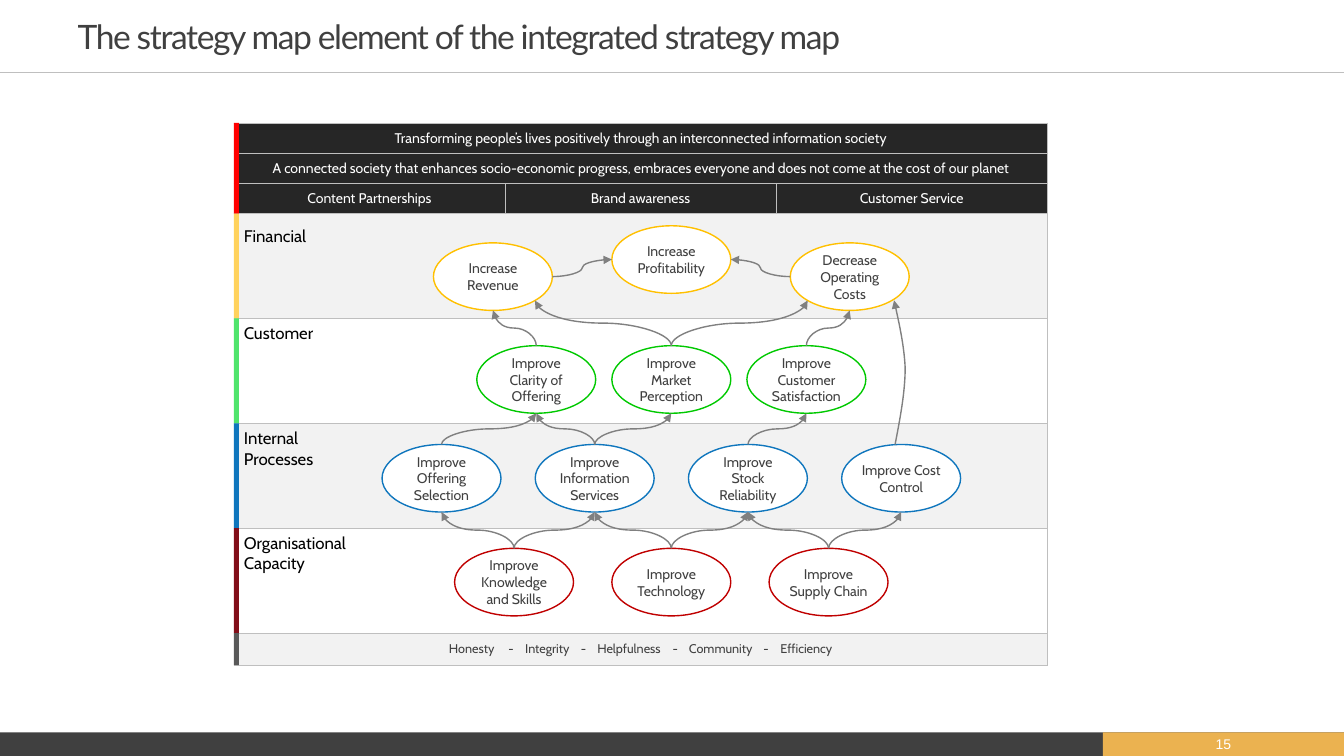
from math import cos, radians, sin

from lxml.etree import SubElement
from pptx import Presentation
from pptx.dml.color import RGBColor
from pptx.enum.shapes import MSO_CONNECTOR, MSO_SHAPE
from pptx.enum.text import MSO_ANCHOR, PP_ALIGN
from pptx.oxml.ns import qn
from pptx.util import Inches, Pt

COLUMNS, ROWS = 160, 90
WHITE = RGBColor(0xFF, 0xFF, 0xFF)
BLACK = RGBColor(0x00, 0x00, 0x00)
CHARCOAL = RGBColor(0x26, 0x26, 0x26)
DARK = RGBColor(0x40, 0x40, 0x40)
SLATE = RGBColor(0x59, 0x59, 0x59)
GREY = RGBColor(0x80, 0x80, 0x80)
RULE = RGBColor(0xBF, 0xBF, 0xBF)
PALE = RGBColor(0xF2, 0xF2, 0xF2)
GOLD = RGBColor(0xEB, 0xB2, 0x50)
AMBER = RGBColor(0xFF, 0xC0, 0x00)
YELLOW = RGBColor(0xFF, 0xD2, 0x5D)
GREEN = RGBColor(0x00, 0xC9, 0x00)
MINT = RGBColor(0x50, 0xE4, 0x6C)
BLUE = RGBColor(0x0F, 0x76, 0xBD)
CRIMSON = RGBColor(0xC0, 0x00, 0x00)
MAROON = RGBColor(0x82, 0x0E, 0x19)
RED = RGBColor(0xFF, 0x00, 0x00)

# Connection sites of an ellipse, counter-clockwise from the top
TOP, LEFT, BOTTOM_LEFT, BOTTOM, BOTTOM_RIGHT, RIGHT = 0, 2, 3, 4, 5, 6

MAP_LEFT, MAP_TOP, MAP_COLUMN = 27.84, 14.64, 32.28
BANNER, BAND, VALUES = 3.6, 12.48, 3.84
AXIS = 79.92
OVAL_WIDTH, OVAL_HEIGHT = 14.16, 8.04


def write(frame, text, *, size=10, font="Cabin", color=DARK, align=PP_ALIGN.CENTER,
          spacing=None, tabs=()):
    """Put one paragraph in a frame; tabs are centred stops in grid columns."""
    para = frame.paragraphs[0]
    para.text = text
    para.alignment = align
    if tabs:
        stops = SubElement(para._p.get_or_add_pPr(), qn("a:tabLst"))
        for stop in tabs:
            SubElement(stops, qn("a:tab"), pos=str(Style.unit(stop)), algn="ctr")
    for span in para.runs:
        span.font.size = Pt(size)
        span.font.name = font
        span.font.color.rgb = color
        if spacing is not None:
            span._r.get_or_add_rPr().set("spc", str(spacing))


class Style:
    """Holds the page and draws on its grid of 160 by 90 square cells."""

    def __init__(self, page):
        self.page = page
        self.shapes = page.shapes

    @staticmethod
    def unit(cells):
        return Inches(cells / 12)

    def place(self, *lengths):
        return [self.unit(length) for length in lengths]

    def title(self, text, *area):
        box = self.shapes.title
        box.left, box.top, box.width, box.height = self.place(*area)
        frame = box.text_frame
        frame.margin_top = frame.margin_bottom = 0
        frame.vertical_anchor = MSO_ANCHOR.MIDDLE
        write(frame, text, size=24, font="Lato", align=PP_ALIGN.LEFT, spacing=-100)

    def shape(self, kind, area, fill, outline=None, text="", **style):
        box = self.shapes.add_shape(kind, *self.place(*area))
        box.shadow.inherit = False
        box.fill.solid()
        box.fill.fore_color.rgb = fill
        if outline is None:
            box.line.fill.background()
        else:
            box.line.color.rgb = outline
            box.line.width = Pt(1)
        if text:
            frame = box.text_frame
            frame.margin_left = frame.margin_right = 0
            frame.margin_top = frame.margin_bottom = 0
            frame.vertical_anchor = MSO_ANCHOR.MIDDLE
            write(frame, text, **style)
        return box

    def oval(self, text, center, middle, color):
        area = (center - OVAL_WIDTH / 2, middle - OVAL_HEIGHT / 2, OVAL_WIDTH, OVAL_HEIGHT)
        return self.shape(MSO_SHAPE.OVAL, area, WHITE, color, text)

    def stroke(self, line, color=GREY, arrow=True):
        line.line.color.rgb = color
        line.line.width = Pt(1)
        if arrow:
            SubElement(line.line._get_or_add_ln(), qn("a:tailEnd"), type="triangle")
        SubElement(line._element.spPr, qn("a:effectLst"))

    def rule(self, row):
        line = self.shapes.add_connector(MSO_CONNECTOR.STRAIGHT, *self.place(0, row, COLUMNS, row))
        self.stroke(line, RULE, arrow=False)

    def link(self, start, start_site, end, end_site):
        """Join two ovals by a curved arrow; upward ones are a turned S-curve."""
        (x1, y1), (x2, y2) = site_point(start, start_site), site_point(end, end_site)
        turn = 0
        if start_site == TOP:
            turn = 90 if x2 > x1 else 270
            side = 1 if x2 > x1 else -1
            center, middle = (x1 + x2) / 2, (y1 + y2) / 2
            half_width, half_height = (y1 - y2) / 2, abs(x2 - x1) / 2
            x1, x2 = center + side * half_width, center - side * half_width
            y1, y2 = middle + half_height, middle - half_height
        line = self.shapes.add_connector(MSO_CONNECTOR.CURVE, *map(round, (x1, y1, x2, y2)))
        if turn:
            line._element.spPr.find(qn("a:xfrm")).set("rot", str(turn * 60000))
        joints = line._element.find(".//" + qn("p:cNvCxnSpPr"))
        for tag, oval, site in (("a:stCxn", start, start_site), ("a:endCxn", end, end_site)):
            SubElement(joints, qn(tag), id=str(oval.shape_id), idx=str(site))
        self.stroke(line)

    def bezier(self, points):
        """Draw an arrow through a start point and cubic triples."""
        start, *rest = [self.place(*point) for point in points]
        builder = self.shapes.build_freeform(*start)
        builder.add_line_segments(rest, close=False)
        curve = builder.convert_to_shape()
        outline = curve._element.find(".//" + qn("a:path"))
        segments = outline.findall(qn("a:lnTo"))
        for first in range(0, len(segments), 3):
            cubic = SubElement(outline, qn("a:cubicBezTo"))
            for segment in segments[first:first + 3]:
                cubic.append(segment[0])
                outline.remove(segment)
        curve.fill.background()
        self.stroke(curve)

    def table(self, left, top, widths, heights):
        frame = self.shapes.add_table(len(heights), len(widths),
                                      *self.place(left, top, sum(widths), sum(heights)))
        table = frame.table
        table.first_row = table.horz_banding = False
        for column, width in zip(table.columns, widths):
            column.width = self.unit(width)
        for row, height in zip(table.rows, heights):
            row.height = self.unit(height)
        return table

    def cell(self, cell, fill, inset=0):
        cell.margin_left = cell.margin_right = self.unit(1.2)
        cell.margin_top, cell.margin_bottom = self.unit(inset), 0
        cell.vertical_anchor = MSO_ANCHOR.TOP if inset else MSO_ANCHOR.MIDDLE
        for side in ("a:lnL", "a:lnR", "a:lnT", "a:lnB"):
            border = SubElement(cell._tc.get_or_add_tcPr(), qn(side), w=str(Pt(0.5)))
            SubElement(SubElement(border, qn("a:solidFill")), qn("a:srgbClr"), val=str(RULE))
        cell.fill.solid()
        cell.fill.fore_color.rgb = fill


def site_point(oval, site):
    angle = radians(90 + 45 * site)
    return (oval.left + oval.width / 2 * (1 + cos(angle)),
            oval.top + oval.height / 2 * (1 - sin(angle)))


def draw_map_table(style):
    banner = dict(color=WHITE)
    label = dict(size=12, color=BLACK, align=PP_ALIGN.LEFT)
    values = dict(size=9, align=PP_ALIGN.LEFT,
                  tabs=(27.12, 31.8, 36.12, 40.44, 45.84, 51.36, 56.76, 62.16, 66.96))
    rows = [
        (BANNER, CHARCOAL, 0, banner, ["Transforming people’s lives positively through an interconnected information society"]),
        (BANNER, CHARCOAL, 0, banner, ["A connected society that enhances socio-economic progress, embraces everyone and does not come at the cost of our planet"]),
        (BANNER, CHARCOAL, 0, banner, ["Content Partnerships", "Brand awareness", "Customer Service"]),
        (BAND, PALE, 1.44, label, ["Financial"]),
        (BAND, WHITE, 0.6, label, ["Customer"]),
        (BAND, PALE, 0.6, label, ["Internal\vProcesses"]),
        (BAND, WHITE, 0.6, label, ["Organisational\vCapacity"]),
        (VALUES, PALE, 0, values, ["\tHonesty\t-\tIntegrity\t-\tHelpfulness\t-\tCommunity\t-\tEfficiency"]),
    ]
    table = style.table(MAP_LEFT, MAP_TOP, [MAP_COLUMN] * 3, [row[0] for row in rows])
    for index, (_, fill, inset, text_style, texts) in enumerate(rows):
        for column in range(3):
            style.cell(table.cell(index, column), fill, inset)
        if len(texts) == 1:
            table.cell(index, 0).merge(table.cell(index, 2))
        for column, text in enumerate(texts):
            write(table.cell(index, column).text_frame, text, **text_style)


def draw_objectives(style):
    levels = [
        (AMBER, 32.94, 21.24, ["Increase Revenue", "Increase Profitability", "Decrease Operating Costs"]),
        (GREEN, 45.18, 16.08, ["Improve Clarity of Offering", "Improve Market Perception", "Improve Customer Satisfaction"]),
        (BLUE, 56.94, 18.24, ["Improve Offering Selection", "Improve Information Services", "Improve Stock Reliability", "Improve Cost Control"]),
        (CRIMSON, 69.3, 18.72, ["Improve Knowledge and Skills", "Improve Technology", "Improve Supply Chain"]),
    ]
    ovals = []
    for color, middle, step, names in levels:
        for index, name in enumerate(names):
            center = AXIS + (index - (len(names) - 1) / 2) * step
            lift = 2.04 if name == "Increase Profitability" else 0
            ovals.append(style.oval(name, center, middle - lift, color))
    (revenue, profit, costs, clarity, market, satisfaction,
     selection, services, stock, control, skills, technology, supply) = ovals
    style.link(revenue, RIGHT, profit, LEFT)
    style.link(costs, LEFT, profit, RIGHT)
    style.link(market, TOP, revenue, BOTTOM_RIGHT)
    style.link(market, TOP, costs, BOTTOM_LEFT)
    for start, end in [(clarity, revenue), (satisfaction, costs), (selection, clarity),
                       (services, clarity), (services, market), (stock, satisfaction),
                       (skills, selection), (skills, services), (technology, services),
                       (technology, stock), (supply, stock), (supply, control)]:
        style.link(start, TOP, end, BOTTOM)
    style.bezier([(106.56, 52.92), (107.16, 49.8), (107.76, 46.68), (107.76, 43.8),
                  (107.64, 41.04), (106.44, 35.76), (106.44, 35.76)])


def main():
    deck = Presentation()
    deck.slide_width, deck.slide_height = Style.unit(COLUMNS), Style.unit(ROWS)
    style = Style(deck.slides.add_slide(deck.slide_layouts[5]))
    style.shape(MSO_SHAPE.RECTANGLE, (0, 87.2, COLUMNS, 2.8), DARK)
    style.rule(8.64)
    style.shape(MSO_SHAPE.RECTANGLE, (131.28, 87.2, 28.72, 2.8), GOLD,
                text="15", font="Arial", color=WHITE)
    style.title("The strategy map element of the integrated strategy map", 8.04, 0.48, 116.64, 7.56)
    draw_map_table(style)
    draw_objectives(style)
    top = MAP_TOP
    for color, height in [(RED, 3 * BANNER), (YELLOW, BAND), (MINT, BAND), (BLUE, BAND),
                          (MAROON, BAND), (SLATE, VALUES)]:
        style.shape(MSO_SHAPE.RECTANGLE, (MAP_LEFT, top, 0.6, height), color)
        top += height
    deck.save("out.pptx")


if __name__ == "__main__":
    main()
